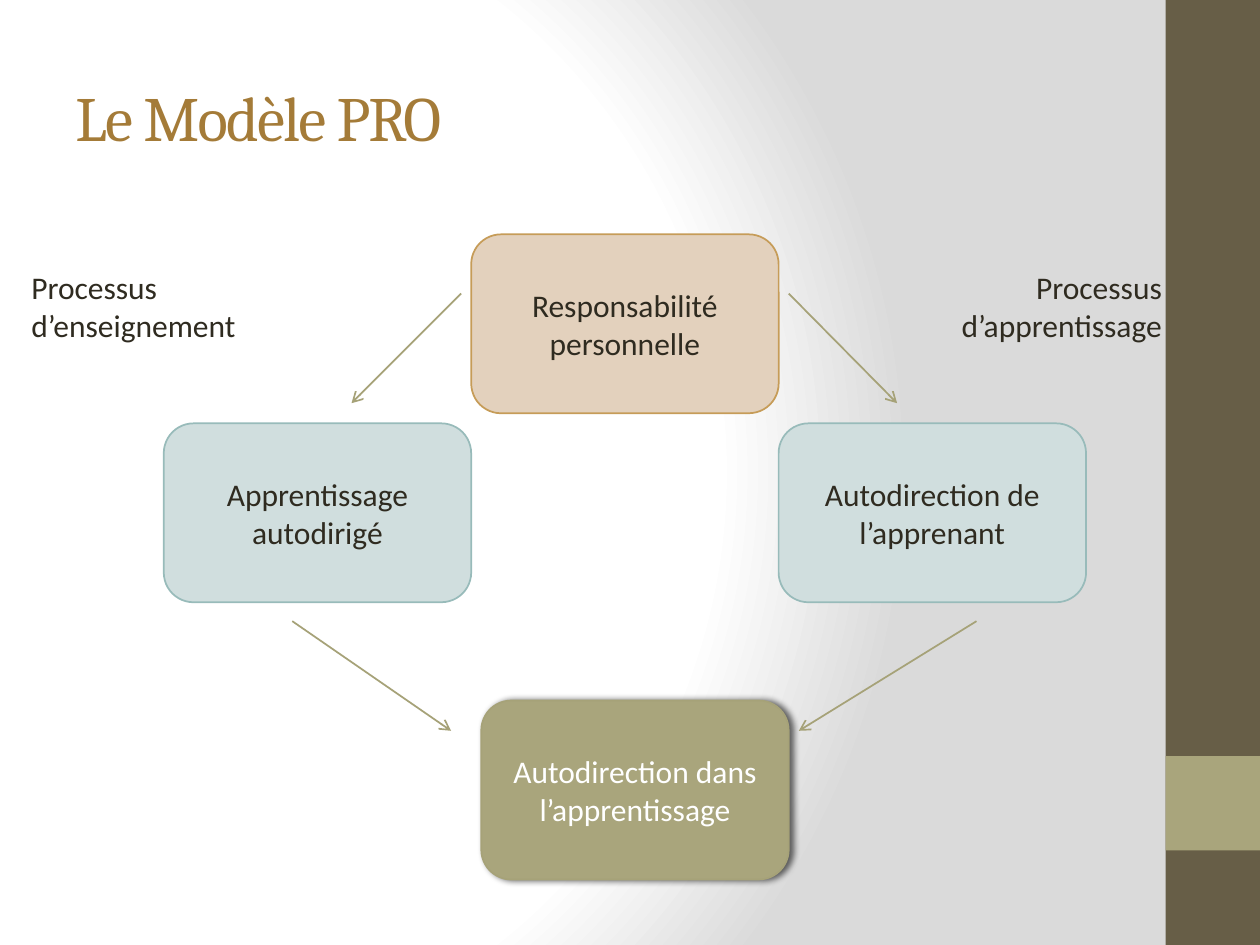
from pptx import Presentation
from pptx.dml.color import RGBColor
from pptx.enum.shapes import MSO_CONNECTOR, MSO_SHAPE
from pptx.enum.text import MSO_ANCHOR, PP_ALIGN
from pptx.oxml import parse_xml
from pptx.oxml.ns import nsdecls
from pptx.util import Inches, Pt

RECTANGLE, ROUNDED = MSO_SHAPE.RECTANGLE, MSO_SHAPE.ROUNDED_RECTANGLE
STRAIGHT = MSO_CONNECTOR.STRAIGHT
TOP, MIDDLE = MSO_ANCHOR.TOP, MSO_ANCHOR.MIDDLE
LEFT, CENTER, RIGHT = PP_ALIGN.LEFT, PP_ALIGN.CENTER, PP_ALIGN.RIGHT

DARK, WHITE, BROWN = "2F2B20", "FFFFFF", "675E47"
GOLD, OLIVE, OLIVE_LINE = "A47B38", "A9A57C", "A6A278"
SAND, SAND_LINE = "E3D1BD", "C69C58"
TEAL, TEAL_LINE = "D0DEDE", "98BBBA"

BOX_WIDTH, BOX_HEIGHT = 2.44, 1.42
# Text, left, top, fill, line, text colour, raised by a shadow
BOXES = [
    ("Responsabilité personnelle", 2.44, 0, SAND, SAND_LINE, DARK, False),
    ("Autodirection dans l’apprentissage", 2.52, 3.7, OLIVE, OLIVE_LINE, WHITE, True),
    ("Apprentissage autodirigé", 0, 1.5, TEAL, TEAL_LINE, DARK, False),
    ("Autodirection de l’apprenant", 4.88, 1.5, TEAL, TEAL_LINE, DARK, False),
]
# Start x, start y, end x, end y
ARROWS = [
    (4.96, 0.47, 5.82, 1.34),
    (2.36, 0.47, 1.49, 1.34),
    (1.02, 3.07, 2.28, 3.94),
    (6.45, 3.07, 5.04, 3.94),
]


def color(value):
    return RGBColor.from_string(value)


def write(shape, text, size=18, font="Calibri", fill=DARK, align=LEFT,
          anchor=TOP, spacing=None):
    frame = shape.text_frame
    frame.word_wrap = True
    frame.vertical_anchor = anchor
    paragraph = frame.paragraphs[0]
    paragraph.alignment = align
    run = paragraph.add_run()
    run.text = text
    run.font.size = Pt(size)
    run.font.name = font
    run.font.color.rgb = color(fill)
    if spacing is not None:
        run.font._element.set("spc", str(spacing * 100))


def add_box(shapes, kind, left, top, width, height, fill, line=None):
    shape = shapes.add_shape(kind, Inches(left), Inches(top), Inches(width), Inches(height))
    shape.shadow.inherit = False
    shape.fill.solid()
    shape.fill.fore_color.rgb = color(fill)
    if line:
        shape.line.color.rgb = color(line)
        shape.line.width = Pt(1)
    else:
        shape.line.fill.background()
    return shape


def add_shadow(shape):
    properties = shape._element.spPr
    effects = properties.find("{http://schemas.openxmlformats.org/drawingml/2006/main}effectLst")
    properties.replace(effects, parse_xml(
        f'<a:effectLst {nsdecls("a")}>'
        f'<a:outerShdw blurRad="{Pt(4)}" dist="{Pt(2)}" dir="0" rotWithShape="0">'
        '<a:srgbClr val="000000"><a:alpha val="60000"/></a:srgbClr>'
        '</a:outerShdw></a:effectLst>'))


def add_arrow(shapes, start_x, start_y, end_x, end_y):
    arrow = shapes.add_connector(STRAIGHT, Inches(start_x), Inches(start_y),
                                 Inches(end_x), Inches(end_y))
    arrow.line.color.rgb = color(OLIVE_LINE)
    arrow.line.width = Pt(1)
    arrow.line._get_or_add_ln().append(
        parse_xml(f'<a:tailEnd {nsdecls("a")} type="arrow"/>'))
    arrow._element.spPr.append(parse_xml(f'<a:effectLst {nsdecls("a")}/>'))


def add_text(slide, left, top, width, height, text, **text_format):
    box = slide.shapes.add_textbox(Inches(left), Inches(top), Inches(width), Inches(height))
    write(box, text, **text_format)
    return box


def set_background(slide):
    """Fill the background with a circular gradient from white to grey."""
    stops = "".join(
        f'<a:gs pos="{position * 1000}"><a:srgbClr val="{value}"/></a:gs>'
        for position, value in [(0, WHITE), (75, WHITE), (100, "DADADA")])
    slide.element.cSld.insert(0, parse_xml(
        f'<p:bg {nsdecls("p", "a")}><p:bgPr><a:gradFill rotWithShape="1">'
        f'<a:gsLst>{stops}</a:gsLst><a:path path="circle">'
        '<a:fillToRect l="20000" t="50000" r="100000" b="50000"/></a:path>'
        '</a:gradFill><a:effectLst/></p:bgPr></p:bg>'))


def add_side_band(slide, left, top, width, height):
    add_box(slide.shapes, RECTANGLE, left, top, width, height, BROWN)
    add_box(slide.shapes, RECTANGLE, left, top + 6, width, width, OLIVE)


def add_title(slide, left, top, width, height):
    title = add_text(slide, left, top, width, height, "Le Modèle PRO", size=36,
                     font="Cambria", fill=GOLD, anchor=MIDDLE, spacing=-1)
    frame = title.text_frame
    frame.margin_top = frame.margin_bottom = Inches(0.1)


def add_model(slide, left, top):
    shapes = slide.shapes.add_group_shape().shapes
    for text, x, y, fill, line, text_fill, raised in BOXES:
        box = add_box(shapes, ROUNDED, left + x, top + y, BOX_WIDTH, BOX_HEIGHT, fill, line)
        write(box, text, fill=text_fill, align=CENTER, anchor=MIDDLE)
        if raised:
            add_shadow(box)
    for start_x, start_y, end_x, end_y in ARROWS:
        add_arrow(shapes, left + start_x, top + start_y, left + end_x, top + end_y)


def add_process_labels(slide, left, top, width, height):
    label_width = 2.28
    add_text(slide, left, top, label_width, height, "Processus d’enseignement")
    add_text(slide, left + width - label_width, top, label_width, height,
             "Processus d’apprentissage", align=RIGHT)


def main():
    presentation = Presentation()
    presentation.slide_width, presentation.slide_height = Inches(10), Inches(7.5)
    slide = presentation.slides.add_slide(presentation.slide_layouts[6])
    set_background(slide)
    add_side_band(slide, 9.25, 0, 0.75, 7.5)
    add_title(slide, 0.5, 0.3, 9, 1.25)
    add_model(slide, 1.3, 1.86)
    add_process_labels(slide, 0.15, 2.08, 9.17, 0.57)
    presentation.save("out.pptx")


if __name__ == "__main__":
    main()
